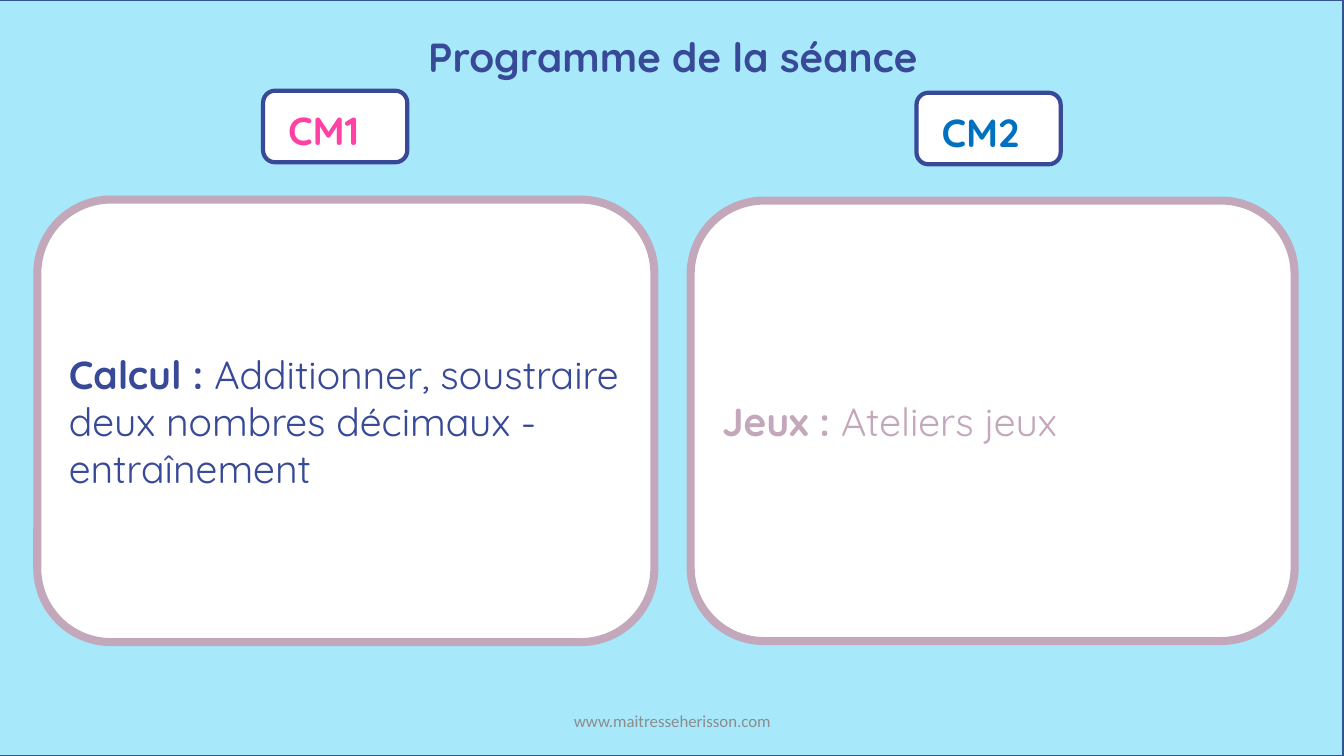
import pptx
import pptx.util
import pptx.dml.color
import pptx.enum.shapes
import pptx.enum.text

Inches = pptx.util.Inches
SHAPE = pptx.enum.shapes.MSO_SHAPE
ALIGN = pptx.enum.text.PP_ALIGN
ANCHOR = pptx.enum.text.MSO_ANCHOR

HEADING = "Programme de la séance"
WEBSITE = "www.maitresseherisson.com"
COLOURS = {
    "sky": "A7E8FB", "edge": "325491", "white": "FFFFFF", "navy": "374997",
    "mauve": "C3A7BA", "pink": "FF41A5", "blue": "0070C0", "grey": "8C8C8C",
}
LEVELS = [
    {"name": "CM1", "name_colour": "pink", "badge": (2.61, 0.9),
     "panel": (0.37, 1.98, 6.12, 4.39), "colour": "navy",
     "subject": "Calcul : ",
     "activity": "Additionner, soustraire deux nombres décimaux - entraînement"},
    {"name": "CM2", "name_colour": "blue", "badge": (9.09, 0.92),
     "panel": (6.85, 1.99, 5.99, 4.37), "colour": "mauve",
     "subject": "Jeux : ",
     "activity": "Ateliers jeux"},
]


def rgb(name):
    return pptx.dml.color.RGBColor.from_string(COLOURS[name])


def write(holder, runs, colour, size=28, font="Quicksand",
          align=ALIGN.LEFT, anchor=ANCHOR.TOP):
    frame = holder.text_frame
    frame.word_wrap = True
    frame.auto_size = pptx.enum.text.MSO_AUTO_SIZE.NONE
    frame.vertical_anchor = anchor
    paragraph = frame.paragraphs[0]
    paragraph.alignment = align
    for text, bold in runs:
        run = paragraph.add_run()
        run.text = text
        run.font.name = font
        run.font.size = pptx.util.Pt(size)
        run.font.bold = bold
        run.font.color.rgb = rgb(colour)


def add_box(shapes, kind, place, fill, line, width):
    box = shapes.add_shape(kind, *map(Inches, place))
    box.shadow.inherit = False
    box.fill.solid()
    box.fill.fore_color.rgb = rgb(fill)
    box.line.color.rgb = rgb(line)
    box.line.width = pptx.util.Pt(width)
    return box


def add_level(slide, level):
    left, top = level["badge"]
    badge = slide.shapes.add_group_shape()
    add_box(badge.shapes, SHAPE.ROUNDED_RECTANGLE, (left, top, 1.43, 0.71),
            "white", "navy", 3)
    label = badge.shapes.add_textbox(
        *map(Inches, (left + 0.15, top + 0.11, 1.1, 0.57)))
    write(label, [(level["name"], True)], level["name_colour"])

    panel = add_box(slide.shapes, SHAPE.ROUNDED_RECTANGLE, level["panel"],
                    "white", "mauve", 5.75)
    write(panel, [(level["subject"], True), (level["activity"], False)],
          level["colour"], anchor=ANCHOR.MIDDLE)


def main():
    deck = pptx.Presentation()
    deck.slide_width, deck.slide_height = Inches(13.33), Inches(7.5)
    slide = deck.slides.add_slide(deck.slide_layouts[5])
    add_box(slide.shapes, SHAPE.RECTANGLE, (-0.01, 0, 13.33, 7.5), "sky", "edge", 1)

    title = slide.shapes.title
    title.element.getparent().append(title.element)
    title.left, title.top, title.width, title.height = map(
        Inches, (0.01, 0.27, 13.33, 0.59))
    write(title, [(HEADING, True)], "navy", size=29, align=ALIGN.CENTER)

    for level in LEVELS:
        add_level(slide, level)

    footer = slide.shapes.add_textbox(*map(Inches, (4.42, 6.95, 4.5, 0.4)))
    write(footer, [(WEBSITE, False)], "grey", size=12, font="Calibri",
          align=ALIGN.CENTER, anchor=ANCHOR.MIDDLE)
    deck.save("out.pptx")


if __name__ == "__main__":
    main()
